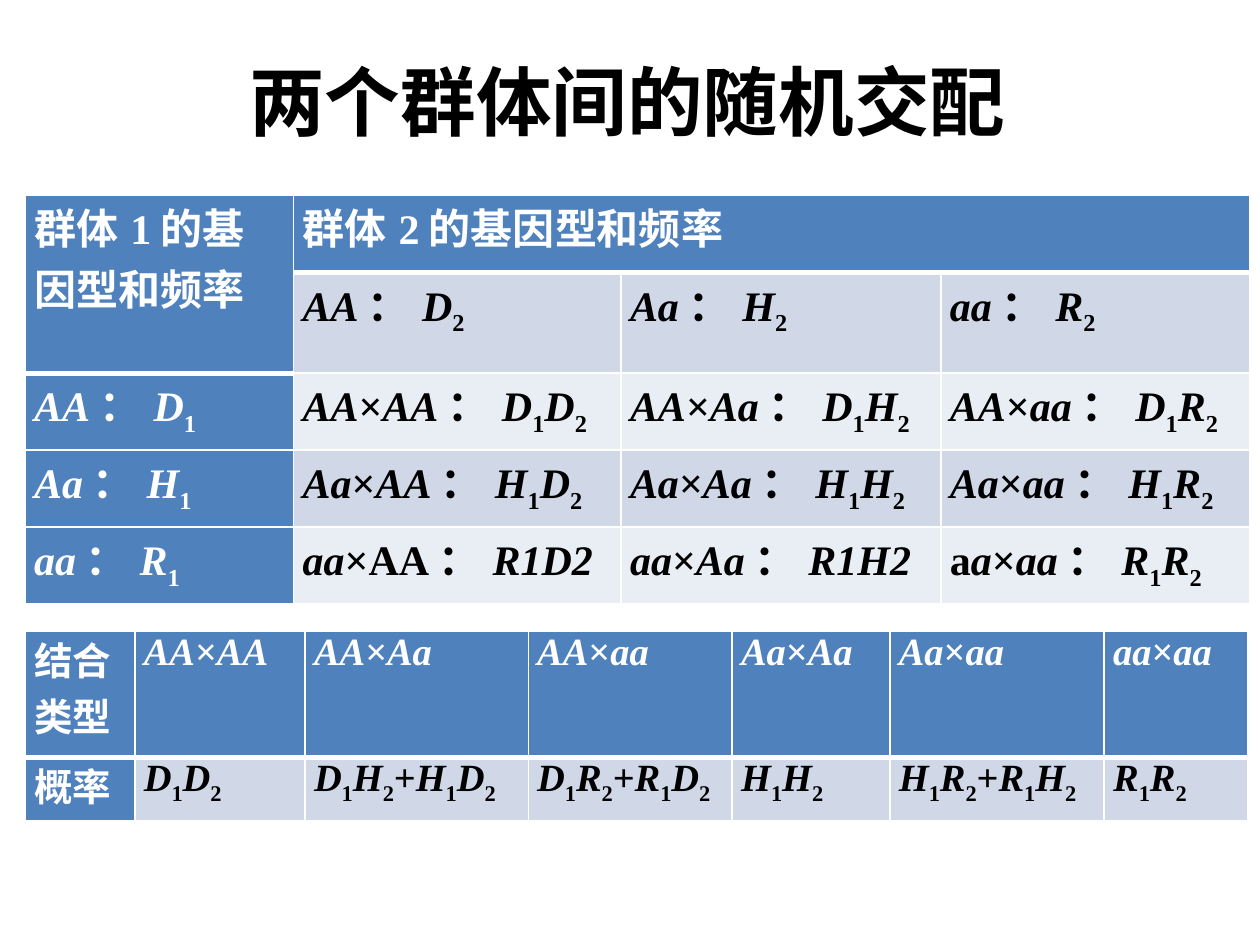
import itertools

import lxml.etree
import pptx
import pptx.dml.color
import pptx.enum.lang
import pptx.enum.text
import pptx.oxml.ns
import pptx.util

Cm = pptx.util.Cm
Pt = pptx.util.Pt
RGBColor = pptx.dml.color.RGBColor
BLACK = RGBColor(0x00, 0x00, 0x00)
WHITE = RGBColor(0xFF, 0xFF, 0xFF)
HEADER_BLUE = RGBColor(0x4F, 0x81, 0xBD)
BAND_DARK = RGBColor(0xD0, 0xD8, 0xE8)
BAND_LIGHT = RGBColor(0xE9, 0xED, 0xF4)
CHINESE = pptx.enum.lang.MSO_LANGUAGE_ID.SIMPLIFIED_CHINESE

GENOTYPES = ["AA", "Aa", "aa"]
FREQUENCIES = ["D", "H", "R"]
SPECIAL_STYLES = {
    "群体1的基因型和频率": "uuuuuuuuuu",
    "群体2的基因型和频率": "uuuuuuuuuu",
    "aa×AA：R1D2": "iiuuuuiiii",
    "aa×Aa：R1H2": "iiuiiuiiii",
    "aa×aa：R1R2": "uiuiiuisis",
}


def add_runs(paragraph, text, font_formats):
    styles = SPECIAL_STYLES.get(text) or [
        "s" if character.isdigit()
        else "i" if character.isascii() and character.isalpha()
        else "u"
        for character in text
    ]
    for style, pairs in itertools.groupby(zip(text, styles), key=lambda pair: pair[1]):
        run = paragraph.add_run()
        run.text = "".join(character for character, _ in pairs)
        color = font_formats["color"]
        formats = {"bold": True, "italic": style == "i", "language_id": CHINESE,
                   "name": font_formats["name"], "size": font_formats["size"]}
        for name, value in formats.items():
            setattr(run.font, name, value)
        run.font.color.rgb = color
        if style == "s":
            run.font._element.set("baseline", "-25000")


def format_cell(cell, fill_color, bottom_width):
    margins = {"margin_left": Cm(0.18), "margin_right": Cm(0.18),
               "margin_top": 0, "margin_bottom": 0}
    for name, value in margins.items():
        setattr(cell, name, value)
    properties = cell._tc.get_or_add_tcPr()
    for side, width in {"L": 1, "R": 1, "T": 1, "B": bottom_width}.items():
        line = lxml.etree.SubElement(properties, pptx.oxml.ns.qn(f"a:ln{side}"), w=str(Pt(width)))
        line_fill = lxml.etree.SubElement(line, pptx.oxml.ns.qn("a:solidFill"))
        lxml.etree.SubElement(line_fill, pptx.oxml.ns.qn("a:srgbClr"), val=str(WHITE))
    cell.fill.solid()
    cell.fill.fore_color.rgb = fill_color


presentation = pptx.Presentation()
presentation.slide_width = Cm(25.4)
presentation.slide_height = Cm(19.05)
slide = presentation.slides.add_slide(presentation.slide_layouts[6])

title = slide.shapes.add_textbox(Cm(3.3), Cm(0.91), Cm(18.69), Cm(2.21))
frame_formats = {"word_wrap": True, "vertical_anchor": pptx.enum.text.MSO_ANCHOR.MIDDLE}
for name, value in frame_formats.items():
    setattr(title.text_frame, name, value)
title_paragraph = title.text_frame.paragraphs[0]
title_paragraph.alignment = pptx.enum.text.PP_ALIGN.CENTER
add_runs(title_paragraph, "两个群体间的随机交配",
         {"name": "Calibri", "size": Pt(43.2), "color": BLACK})

mating_rows = [
    ["群体1的基因型和频率", "群体2的基因型和频率", "", ""],
    [""] + [f"{genotype}：{frequency}2" for genotype, frequency in zip(GENOTYPES, FREQUENCIES)],
]
for genotype, frequency in zip(GENOTYPES, FREQUENCIES):
    mating_rows.append([f"{genotype}：{frequency}1"] + [
        f"{genotype}×{partner}：{frequency}1{partner_frequency}2"
        for partner, partner_frequency in zip(GENOTYPES, FREQUENCIES)
    ])

pairs = list(itertools.combinations_with_replacement(range(3), 2))
union_rows = [
    ["结合类型"] + [f"{GENOTYPES[first]}×{GENOTYPES[second]}" for first, second in pairs],
    ["概率"] + [
        "+".join(f"{FREQUENCIES[left]}1{FREQUENCIES[right]}2"
                 for left, right in dict.fromkeys([(first, second), (second, first)]))
        for first, second in pairs
    ],
]

tables = [
    {"rows": mating_rows, "top": 3.94, "size": 24, "heights": [1.55] * 5,
     "widths": [5.41, 6.6, 6.45, 6.22], "merges": [(0, 0, 1, 0), (0, 1, 0, 3)]},
    {"rows": union_rows, "top": 12.73, "size": 22, "heights": [2.54, 1.27],
     "widths": [2.21, 3.43, 4.5, 4.11, 3.18, 4.32, 2.9], "merges": []},
]
for layout in tables:
    widths, heights = layout["widths"], layout["heights"]
    table = slide.shapes.add_table(
        len(heights), len(widths), Cm(0.51), Cm(layout["top"]),
        Cm(sum(widths)), Cm(sum(heights))).table
    for column, width in zip(table.columns, widths):
        column.width = Cm(width)
    for row, height in zip(table.rows, heights):
        row.height = Cm(height)
    for top, left, bottom, right in layout["merges"]:
        table.cell(top, left).merge(table.cell(bottom, right))
    for row_index, texts in enumerate(layout["rows"]):
        for column_index, text in enumerate(texts):
            cell = table.cell(row_index, column_index)
            is_header = row_index == 0 or column_index == 0
            band = BAND_DARK if row_index % 2 else BAND_LIGHT
            is_header_end = row_index == 0 or (cell.is_spanned and column_index == 0)
            format_cell(cell, HEADER_BLUE if is_header else band, 3 if is_header_end else 1)
            if not cell.is_spanned:
                add_runs(cell.text_frame.paragraphs[0], text,
                         {"name": "Times New Roman", "size": Pt(layout["size"]),
                          "color": WHITE if is_header else BLACK})

presentation.save("out.pptx")
